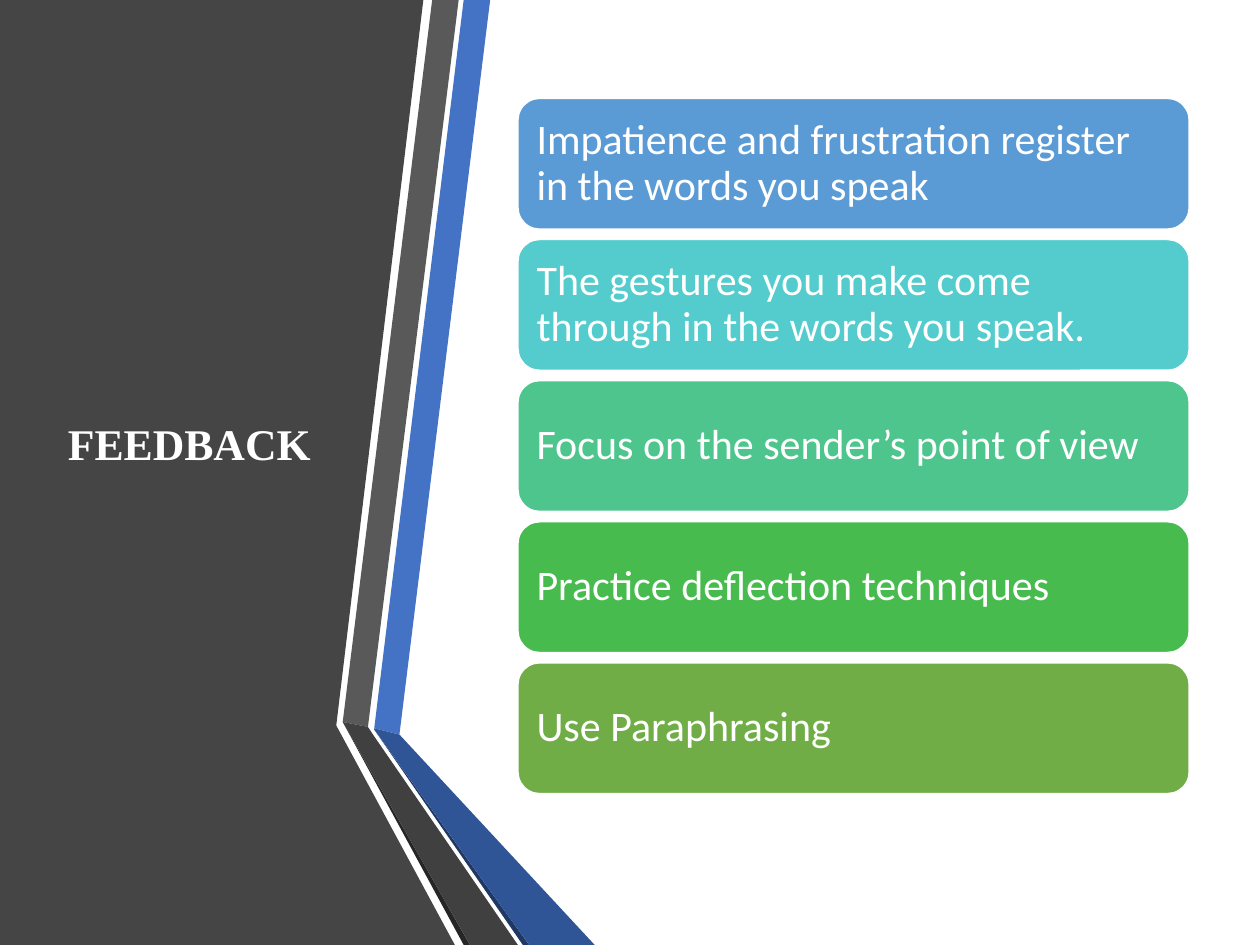
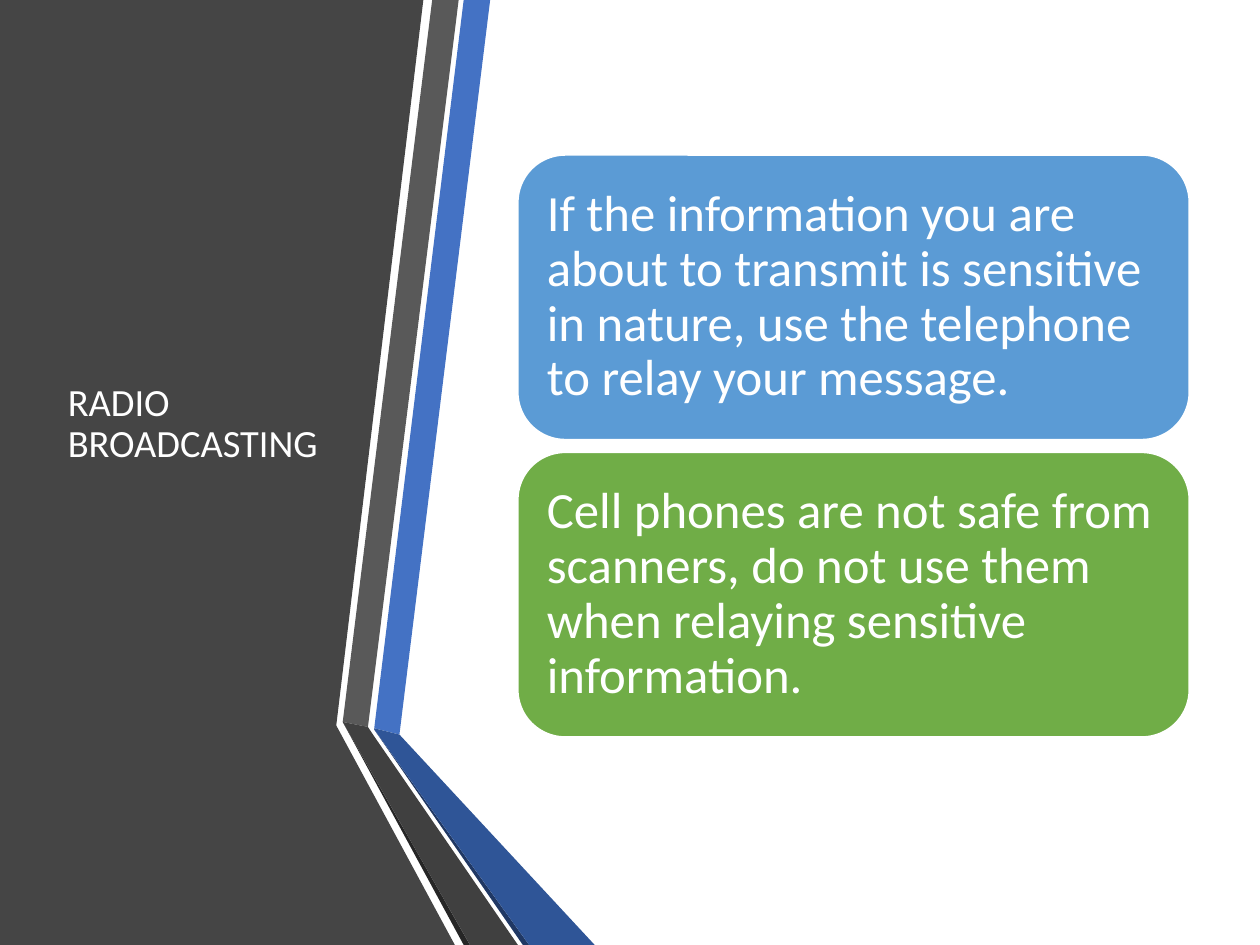
from dataclasses import dataclass

from pptx import Presentation
from pptx.dml.color import RGBColor
from pptx.enum.shapes import MSO_SHAPE
from pptx.enum.text import MSO_ANCHOR, PP_ALIGN
from pptx.util import Inches, Pt

ROUND = MSO_SHAPE.ROUNDED_RECTANGLE
MIDDLE = MSO_ANCHOR.MIDDLE
LEFT = PP_ALIGN.LEFT


@dataclass(frozen=True)
class Theme:
    white: str = "FFFFFF"
    panel: str = "454545"
    blue: str = "4472C4"
    navy: str = "203864"
    deep: str = "2F5597"
    gray: str = "595959"
    coal: str = "404040"
    black: str = "262626"
    sky: str = "5B9BD5"
    aqua: str = "54CCCD"
    mint: str = "4DC58D"
    green: str = "48BB4F"
    olive: str = "70AD47"
    sans: str = "Calibri"
    serif: str = "Times New Roman"
    leading: float = 0.9
    edge: float = 1


THEME = Theme()

# "lift" is the room kept free below the title, in inches.
SLIDES = [
    {
        "title": {"text": "FEEDBACK", "font": THEME.serif, "size": 25,
                  "bold": True, "lift": 0},
        "style": {"size": 24, "high": 1.04, "gap": 0.08, "inset": 0.1},
        "cards": [
            ("Impatience and frustration register in the words you speak",
             THEME.sky),
            ("The gestures you make come through in the words you speak.",
             THEME.aqua),
            ("Focus on the sender’s point of view", THEME.mint),
            ("Practice deflection techniques", THEME.green),
            ("Use Paraphrasing", THEME.olive),
        ],
    },
    {
        "title": {"text": "RADIO BROADCASTING", "font": THEME.sans, "size": 22,
                  "bold": False, "lift": 0.34},
        "style": {"size": 29, "high": 2.26, "gap": 0.1, "inset": 0.12},
        "cards": [
            ("If the information you are about to transmit is sensitive in "
             "nature, use the telephone to relay your message.", THEME.sky),
            ("Cell phones are not safe from scanners, do not use them when "
             "relaying sensitive information.", THEME.olive),
        ],
    },
]

PANEL = [(0, 0), (3.36, 0), (2.67, 5.75), (2.67, 5.76), (3.61, 7.5), (0, 7.5)]
BANDS = [
    (THEME.blue, [(2.97, 5.78), (3.17, 5.83), (3.89, 0), (3.68, 0)]),
    (THEME.gray, [(3.64, 0), (3.43, 0), (2.72, 5.73), (2.92, 5.77)]),
    (THEME.black, [(2.72, 5.73), (3.68, 7.5), (3.73, 7.5)]),
    (THEME.navy, [(2.97, 5.79), (4.15, 7.5), (4.2, 7.5)]),
    (THEME.deep, [(2.97, 5.78), (2.97, 5.79), (4.2, 7.5), (4.72, 7.5),
                  (3.17, 5.83)]),
    (THEME.coal, [(4.11, 7.5), (2.96, 5.83), (2.92, 5.77), (2.72, 5.73),
                  (3.73, 7.5)]),
]

TITLE = (0.44, 0.75, 2.28, 5.58)
MID = TITLE[1] + TITLE[3] / 2
CARD_X, CARD_W = 4.11, 5.33


def paint(shape, color):
    shape.shadow.inherit = False
    shape.fill.solid()
    shape.fill.fore_color.rgb = RGBColor.from_string(color)


def draw(shapes, color, points):
    """Add a filled outline through points given in inches."""
    first, *rest = [(Inches(x), Inches(y)) for x, y in points]
    pen = shapes.build_freeform(*first)
    pen.add_line_segments(rest, close=True)
    shape = pen.convert_to_shape()
    paint(shape, color)
    shape.line.fill.background()


def write(shape, text, size, font=THEME.sans, bold=False):
    frame = shape.text_frame
    frame.word_wrap = True
    frame.vertical_anchor = MIDDLE
    para = frame.paragraphs[0]
    para.text = text
    para.alignment = LEFT
    para.line_spacing = THEME.leading
    para.font.name = font
    para.font.size = Pt(size)
    para.font.bold = bold
    para.font.color.rgb = RGBColor.from_string(THEME.white)
    return frame


def add_base(slide):
    draw(slide.shapes, THEME.panel, PANEL)
    group = slide.shapes.add_group_shape()
    for color, points in BANDS:
        draw(group.shapes, color, points)


def add_title(slide, text, font, size, bold, lift):
    x, y, wide, high = TITLE
    box = slide.shapes.add_textbox(
        Inches(x), Inches(y), Inches(wide), Inches(high - lift))
    write(box, text, size, font, bold)


def add_cards(slide, cards, size, high, gap, inset):
    """Stack equal cards, centred on the height of the title."""
    step = high + gap
    top = MID - (len(cards) * step - gap) / 2
    for i, (text, color) in enumerate(cards):
        card = slide.shapes.add_shape(
            ROUND, Inches(CARD_X), Inches(top + i * step),
            Inches(CARD_W), Inches(high))
        paint(card, color)
        card.line.color.rgb = RGBColor.from_string(THEME.white)
        card.line.width = Pt(THEME.edge)
        frame = write(card, text, size)
        frame.margin_left = frame.margin_right = Inches(inset)
        frame.margin_top = frame.margin_bottom = Inches(inset)


def main():
    deck = Presentation()
    deck.slide_width, deck.slide_height = Inches(10), Inches(7.5)
    blank = deck.slide_layouts[6]
    for page in SLIDES:
        slide = deck.slides.add_slide(blank)
        add_base(slide)
        add_title(slide, **page["title"])
        add_cards(slide, page["cards"], **page["style"])
    deck.save("out.pptx")


if __name__ == "__main__":
    main()
